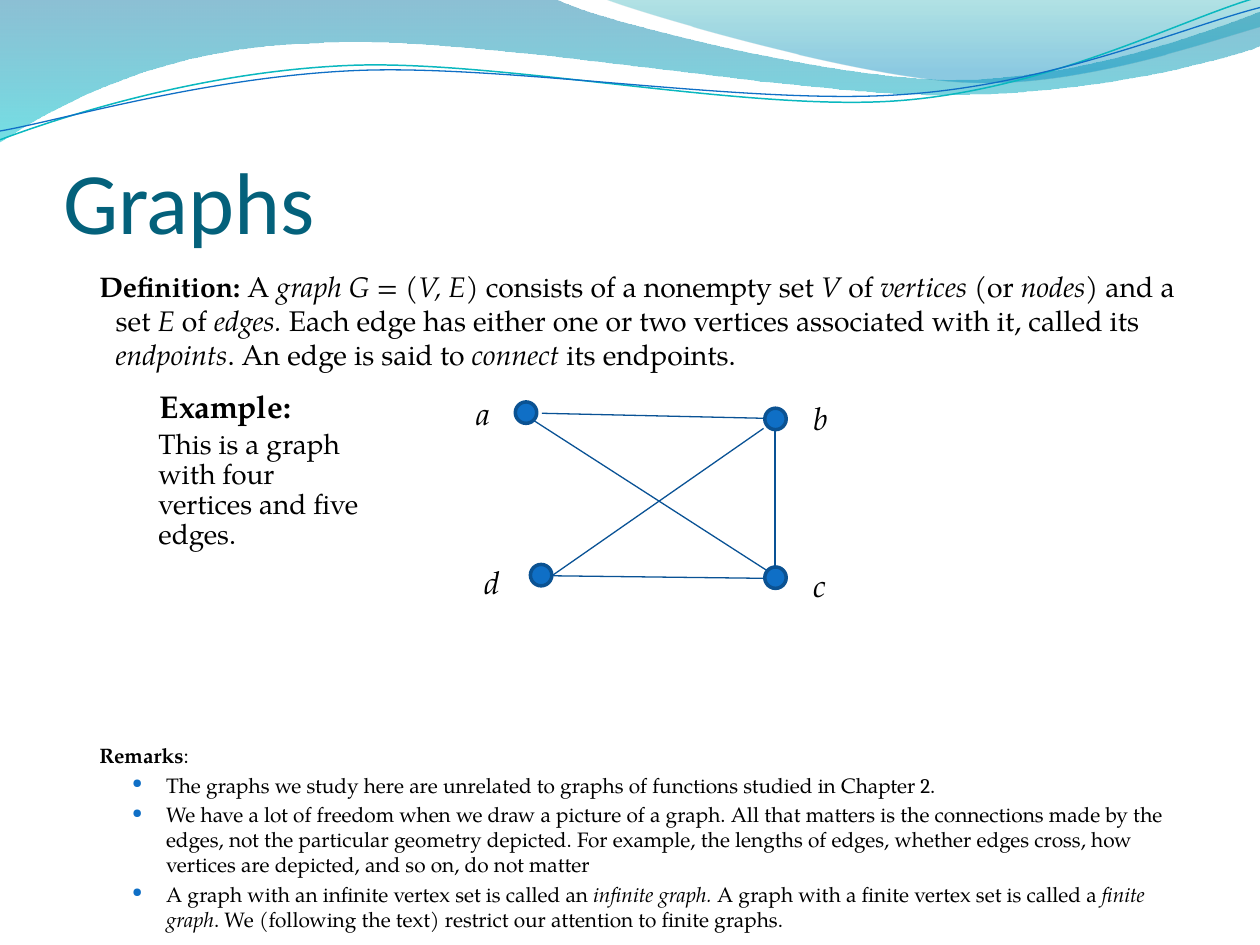
import pptx
import pptx.util
import pptx.dml.color
import pptx.enum.shapes
import pptx.enum.text
import pptx.oxml.ns
from lxml import etree

Inches, Pt = pptx.util.Inches, pptx.util.Pt
RGBColor = pptx.dml.color.RGBColor
qn = pptx.oxml.ns.qn

BLACK = RGBColor(0x00, 0x00, 0x00)
TITLE_TEAL = RGBColor(0x04, 0x61, 0x7B)
BLUE = RGBColor(0x0F, 0x6F, 0xC6)
NODE_OUTLINE = RGBColor(0x0B, 0x52, 0x92)
EDGE_BLUE = RGBColor(0x09, 0x52, 0x95)
CYAN = RGBColor(0x0A, 0xB8, 0xBF)
SERIF = "TeX Gyre Pagella"

# Runs are (text, style): b bold, i italic, n numeral font, empty plain.
DEFINITION = [
    ("Definition:", "b"), (" A ", ""), ("graph G = ", "i"), ("(", ""), ("V, E", "i"),
    (") consists of a nonempty set ", ""), ("V", "i"), (" of ", ""), ("vertices ", "i"),
    ("(or ", ""), ("nodes", "i"), (") and a set ", ""), ("E", "i"), (" of ", ""),
    ("edges. ", "i"),
    ("Each edge has either one or two vertices associated with it, called its ", ""),
    ("endpoints", "i"), (". An edge is said to ", ""), ("connect", "i"),
    (" its endpoints.", ""),
]
REMARKS_HEADING = [("Remarks", "b"), (":", "")]
REMARKS = [
    [("The graphs we study here are unrelated to graphs of functions studied in Chapter ", ""),
     ("2", "n"), (".", "")],
    [("We have a lot of freedom when we draw a picture of a graph. All that matters is the "
      "connections made by the edges, not the particular geometry depicted. For example, the "
      "lengths of edges, whether edges cross, how vertices are depicted, and so on, do not "
      "matter", "")],
    [("A graph with an infinite vertex set is called an ", ""), ("infinite graph. ", "i"),
     ("A graph with a finite vertex set is called a ", ""), ("finite graph", "i"),
     (". We (following the text) restrict our attention to finite graphs.", "")],
]
EXAMPLE_HEADING = [("Example:", "b")]
EXAMPLE = [("This is a graph with four vertices and five edges.", "")]

# Vertex: (left, top) of its dot, then of its label
NODE_SIZE = 0.17
VERTICES = {
    "a": ((4.09, 3.19), (3.68, 3.08)),
    "b": ((6.07, 3.24), (6.36, 3.12)),
    "c": ((6.07, 4.5), (6.36, 4.44)),
    "d": ((4.21, 4.48), (3.75, 4.42)),
}
EDGES = [
    ((4.24, 3.34), (6.09, 4.53)),  # a-c
    ((4.38, 4.57), (6.06, 3.4)),   # d-b
    ((4.3, 3.28), (6.06, 3.32)),   # a-b
    ((6.15, 3.4), (6.15, 4.5)),    # b-c
    ((4.38, 4.57), (6.06, 4.59)),  # d-c
]

# Wave outlines: each step is one point (straight) or three (cubic curve).
# Gradient stops are (position, colour, opacity in percent).
BANDS = [
    ([[(0, 0)], [(4.4, -0.01)], [(4.76, 0.17), (6.64, 0.63), (7.58, 0.63)],
      [(8.53, 0.63), (9.58, 0.26), (10, 0.09)], [(10.01, 0.36)],
      [(9.83, 0.44), (8.7, 0.76), (7.46, 0.75)], [(6.22, 0.75), (3.82, 0.28), (2.57, 0.34)],
      [(1.29, 0.36), (0.46, 0.83), (-0.01, 1.13)]],
     [(0, RGBColor(0x00, 0x74, 0xA1), 45), (1, RGBColor(0x00, 0xC6, 0xCF), 55)]),
    ([[(4.79, -0.01)], [(5.09, 0.11), (6.82, 0.62), (7.69, 0.65)],
      [(8.56, 0.69), (9.61, 0.32), (10, 0.21)], [(10, 0)]],
     [(0, RGBColor(0x00, 0xA1, 0xA9), 30), (0.8, RGBColor(0x00, 0x8B, 0xBF), 45)]),
]
WAVE_LINES = [
    ([[(0, 1.11)], [(0.48, 0.93), (1.58, 0.57), (2.77, 0.52)],
      [(3.95, 0.47), (5.93, 0.89), (7.13, 0.8)], [(8.33, 0.71), (9.38, 0.15), (9.98, -0.02)]],
     CYAN, 0.85),
    ([[(0, 1.04)], [(0.47, 0.96), (1.64, 0.61), (2.83, 0.56)],
      [(4.03, 0.51), (5.97, 0.84), (7.17, 0.75)], [(8.36, 0.67), (9.41, 0.21), (10, 0.06)]],
     BLUE, 0.75),
]


def add_outline(slide, steps, close):
    """Build a freeform, then merge each three-point step into one cubic curve."""
    start, *rest = [(Inches(x), Inches(y)) for step in steps for x, y in step]
    builder = slide.shapes.build_freeform(*start, scale=1.0)
    builder.add_line_segments(rest, close=close)
    outline = builder.convert_to_shape()
    outline.shadow.inherit = False
    segments = iter(list(outline._element.iter(qn("a:lnTo"))))
    for step in steps[1:]:
        parts = [next(segments) for _ in step]
        if len(parts) == 3:
            curve = etree.Element(qn("a:cubicBezTo"))
            parts[0].addprevious(curve)
            for part in parts:
                curve.append(part[0])
                part.getparent().remove(part)
    return outline


def add_band(slide, steps, stops):
    band = add_outline(slide, steps, True)
    band.line.fill.background()
    band.fill.gradient()
    band.fill.gradient_angle = 270
    for stop, (position, colour, _) in zip(band.fill.gradient_stops, stops):
        stop.position = position
        stop.color.rgb = colour
    colours = band._element.spPr.iter(qn("a:srgbClr"))
    for colour, (_, _, opacity) in zip(colours, stops):
        etree.SubElement(colour, qn("a:alpha"), val=str(opacity * 1000))


def add_text(slide, left, top, width, height):
    frame = slide.shapes.add_textbox(*map(Inches, (left, top, width, height))).text_frame
    frame.word_wrap = True
    return frame


def write(paragraph, runs, size, margin=0.0, indent=0.0, bullet=False):
    properties = paragraph._p.get_or_add_pPr()
    properties.set("marL", str(Inches(margin)))
    properties.set("indent", str(Inches(indent)))
    if bullet:
        colour = etree.SubElement(properties, qn("a:buClr"))
        etree.SubElement(colour, qn("a:srgbClr"), val=str(BLUE))
        etree.SubElement(properties, qn("a:buSzPct"), val="62000")
        etree.SubElement(properties, qn("a:buChar"), char="●")
    paragraph.font.size = Pt(size)
    paragraph.font.color.rgb = BLACK
    for text, style in runs:
        run = paragraph.add_run()
        run.text = text
        run.font.size = Pt(size)
        run.font.color.rgb = BLACK
        run.font.name = "Cambria" if style == "n" else SERIF
        run.font.bold = style == "b"
        run.font.italic = style == "i"


def add_graph(slide):
    for name, (dot, label) in VERTICES.items():
        node = slide.shapes.add_shape(pptx.enum.shapes.MSO_SHAPE.OVAL,
                                      *map(Inches, dot + (NODE_SIZE, NODE_SIZE)))
        node.shadow.inherit = False
        node.fill.solid()
        node.fill.fore_color.rgb = BLUE
        node.line.color.rgb = NODE_OUTLINE
        node.line.width = Pt(2)
        write(add_text(slide, *label, 0.35, 0.4).paragraphs[0], [(name, "i")], 18)
    for start, end in EDGES:
        edge = slide.shapes.add_connector(pptx.enum.shapes.MSO_CONNECTOR.STRAIGHT,
                                          *map(Inches, start + end))
        edge.line.color.rgb = EDGE_BLUE
        edge.line.width = Pt(0.75)
        etree.SubElement(edge._element.spPr, qn("a:effectLst"))


def main():
    deck = pptx.Presentation()
    deck.slide_width, deck.slide_height = Inches(10), Inches(7.5)
    slide = deck.slides.add_slide(deck.slide_layouts[5])

    for steps, stops in BANDS:
        add_band(slide, steps, stops)
    for steps, colour, width in WAVE_LINES:
        wave = add_outline(slide, steps, False)
        wave.fill.background()
        wave.line.color.rgb = colour
        wave.line.width = Pt(width)

    title = slide.shapes.title
    title.left, title.top, title.width, title.height = map(Inches, (0.5, 0.75, 9, 1.25))
    frame = title.text_frame
    frame.text = "Graphs"
    frame.auto_size = pptx.enum.text.MSO_AUTO_SIZE.NONE
    frame.vertical_anchor = pptx.enum.text.MSO_ANCHOR.BOTTOM
    frame.margin_left = frame.margin_right = frame.margin_bottom = 0
    heading = frame.paragraphs[0]
    heading.alignment = pptx.enum.text.PP_ALIGN.LEFT
    heading.font.name, heading.font.size = "Calibri", Pt(50)
    heading.font.color.rgb = TITLE_TEAL

    body = add_text(slide, 0.52, 2.09, 9, 5.35)
    write(body.paragraphs[0], DEFINITION, 16.2, margin=0.3, indent=-0.13)
    remarks_heading = body.add_paragraph()
    write(remarks_heading, REMARKS_HEADING, 11.9, margin=0.3, indent=-0.13)
    remarks_heading.space_before = Pt(212)  # leaves room for the graph
    for remark in REMARKS:
        paragraph = body.add_paragraph()
        write(paragraph, remark, 11.9, margin=0.7, indent=-0.27, bullet=True)
        paragraph.space_before = Pt(2.6)

    add_graph(slide)
    write(add_text(slide, 1.17, 3.02, 1.38, 0.4).paragraphs[0], EXAMPLE_HEADING, 18)
    example = add_text(slide, 1.16, 3.37, 1.83, 1.05).paragraphs[0]
    write(example, EXAMPLE, 16)
    example.line_spacing = Pt(17)

    deck.save("out.pptx")


if __name__ == "__main__":
    main()
